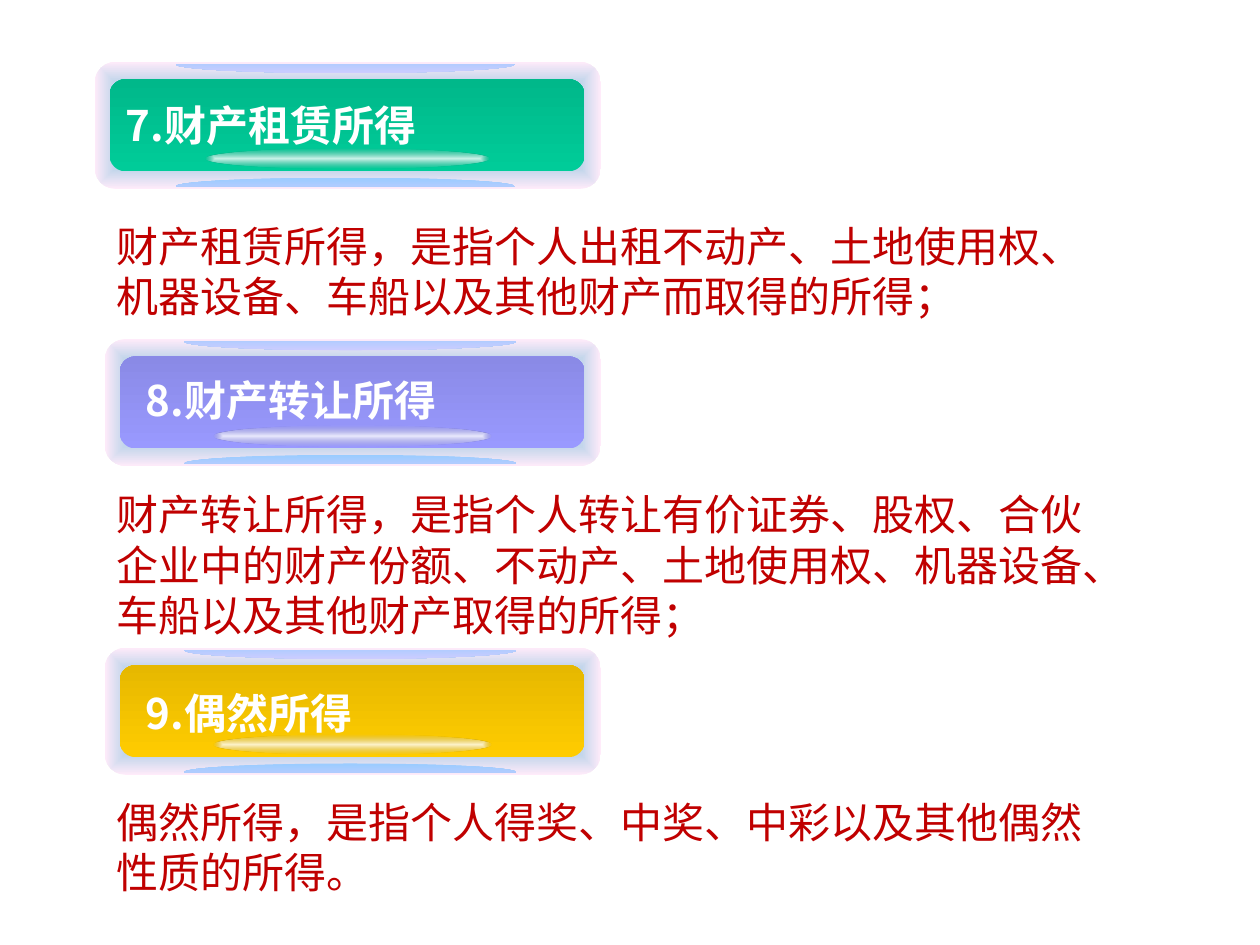
from lxml import etree
from pptx import Presentation
from pptx.dml.color import RGBColor
from pptx.enum.shapes import MSO_SHAPE as SHAPE
from pptx.enum.text import MSO_AUTO_SIZE as AUTO
from pptx.oxml import parse_xml
from pptx.oxml.ns import nsdecls, qn
from pptx.util import Inches, Pt

FONT = "Noto Sans CJK SC"
WHITE = RGBColor(0xFF, 0xFF, 0xFF)
RED = RGBColor(0xC0, 0x00, 0x00)
GRAY = RGBColor(0xB6, 0xB6, 0xB6)
GREEN = RGBColor(0x00, 0xCC, 0x99)
GREEN_DARK = RGBColor(0x00, 0xB8, 0x8A)
PURPLE = RGBColor(0x99, 0x99, 0xFF)
PURPLE_DARK = RGBColor(0x8A, 0x8A, 0xE6)
GOLD = RGBColor(0xFF, 0xCC, 0x00)
GOLD_DARK = RGBColor(0xE6, 0xB8, 0x00)
SKY = RGBColor(0x99, 0xCC, 0xFF)
LILAC = RGBColor(0xCC, 0xCC, 0xFF)
FRAME_STOPS = [
    (0, RGBColor(0x5E, 0x9E, 0xFF), 100),
    (40, RGBColor(0x85, 0xC2, 0xFF), 100),
    (70, RGBColor(0xC4, 0xD6, 0xEB), 100),
    (100, RGBColor(0xFF, 0xEB, 0xFA), 100),
]
GLOSS_STOPS = [(0, WHITE, 80), (100, GRAY, 0)]
HEADING = {"size": Pt(24), "name": FONT, "bold": True}
BODY = {"size": Pt(24), "name": FONT}

SECTIONS = [
    {
        "frame": (0.75, 0.49, 4.02), "colors": (GREEN, GREEN_DARK),
        "heading": "7.财产租赁所得", "heading_at": (0.9, 0.74, 2.6, 0.5),
        "body": "财产租赁所得，是指个人出租不动产、土地使用权、机器设备、车船以及其他财产而取得的所得；",
        "body_at": (0.83, 1.7, 7.8, 0.91),
    },
    {
        "frame": (0.83, 2.69, 3.94), "colors": (PURPLE, PURPLE_DARK),
        "heading": "8.财产转让所得", "heading_at": (1.06, 2.92, 2.6, 0.5),
        "body": "财产转让所得，是指个人转让有价证券、股权、合伙企业中的财产份额、不动产、"
                "土地使用权、机器设备、车船以及其他财产取得的所得；",
        "body_at": (0.83, 3.83, 8.03, 1.31),
    },
    {
        "frame": (0.83, 5.14, 3.94), "colors": (GOLD, GOLD_DARK),
        "heading": "9.偶然所得", "heading_at": (1.06, 5.41, 2.6, 0.5),
        "body": "偶然所得，是指个人得奖、中奖、中彩以及其他偶然性质的所得。",
        "body_at": (0.83, 6.27, 7.87, 0.91),
    },
]


def set_gradient(sp, stops, radial):
    grad = parse_xml(f'<a:gradFill {nsdecls("a")} rotWithShape="1"><a:gsLst/></a:gradFill>')
    for pos, color, alpha in stops:
        gs = etree.SubElement(grad[0], qn("a:gs"), pos=str(pos * 1000))
        clr = etree.SubElement(gs, qn("a:srgbClr"), val=str(color))
        if alpha < 100:
            etree.SubElement(clr, qn("a:alpha"), val=str(alpha * 1000))
    if radial:
        shade = etree.SubElement(grad, qn("a:path"))
        shade.set("path", "shape")
        etree.SubElement(shade, qn("a:fillToRect"), dict.fromkeys("ltrb", "50000"))
    else:
        etree.SubElement(grad, qn("a:lin"), ang="5400000", scaled="1")
    sp._element.spPr.find(qn("a:prstGeom")).addnext(grad)


def add_part(group, kind, box, stops, radial=False, adjustments=(), flip=False):
    sp = group.shapes.add_shape(kind, *map(Inches, box))
    for i, value in enumerate(adjustments):
        sp.adjustments[i] = value
    sp.shadow.inherit = False
    sp.line.fill.background()
    set_gradient(sp, stops, radial)
    if flip:
        sp._element.spPr.find(qn("a:xfrm")).set("flipV", "1")


def add_text(shapes, text, box, style, color):
    tf = shapes.add_textbox(*map(Inches, box)).text_frame
    tf.word_wrap = True
    tf.auto_size = AUTO.SHAPE_TO_FIT_TEXT
    r = tf.paragraphs[0].add_run()
    r.text = text
    for name, value in style.items():
        setattr(r.font, name, value)
    r.font.color.rgb = color
    etree.SubElement(r._r.get_or_add_rPr(), qn("a:ea"), typeface=FONT)


def add_banner(slide, section):
    left, top, width = section["frame"]
    bright, dark = section["colors"]
    cap = [(0, SKY, 100), (100, LILAC, 100)]
    cap_left, cap_width = left + 0.16 * width, 0.67 * width
    group = slide.shapes.add_group_shape()
    add_part(group, SHAPE.ROUNDED_RECTANGLE, (left, top, width, 1.01),
             FRAME_STOPS, True, [0.17], True)
    add_part(group, SHAPE.CHORD, (cap_left, top - 0.05, cap_width, 0.14),
             cap, adjustments=[0, 108])
    add_part(group, SHAPE.CHORD, (cap_left, top + 0.92, cap_width, 0.14),
             cap, adjustments=[108, 0])
    add_part(group, SHAPE.ROUNDED_RECTANGLE, (left + 0.12, top + 0.14, width - 0.25, 0.73),
             [(0, bright, 100), (100, dark, 100)], adjustments=[0.17], flip=True)
    add_part(group, SHAPE.OVAL, (left + 0.22 * width, top + 0.69, 0.56 * width, 0.16),
             GLOSS_STOPS, True)
    add_text(group.shapes, section["heading"], section["heading_at"], HEADING, WHITE)


def main():
    prs = Presentation()
    prs.slide_width, prs.slide_height = Inches(10), Inches(7.5)
    slide = prs.slides.add_slide(prs.slide_layouts[6])
    for section in SECTIONS:
        add_banner(slide, section)
        add_text(slide.shapes, section["body"], section["body_at"], BODY, RED)
    prs.save("out.pptx")


if __name__ == "__main__":
    main()
